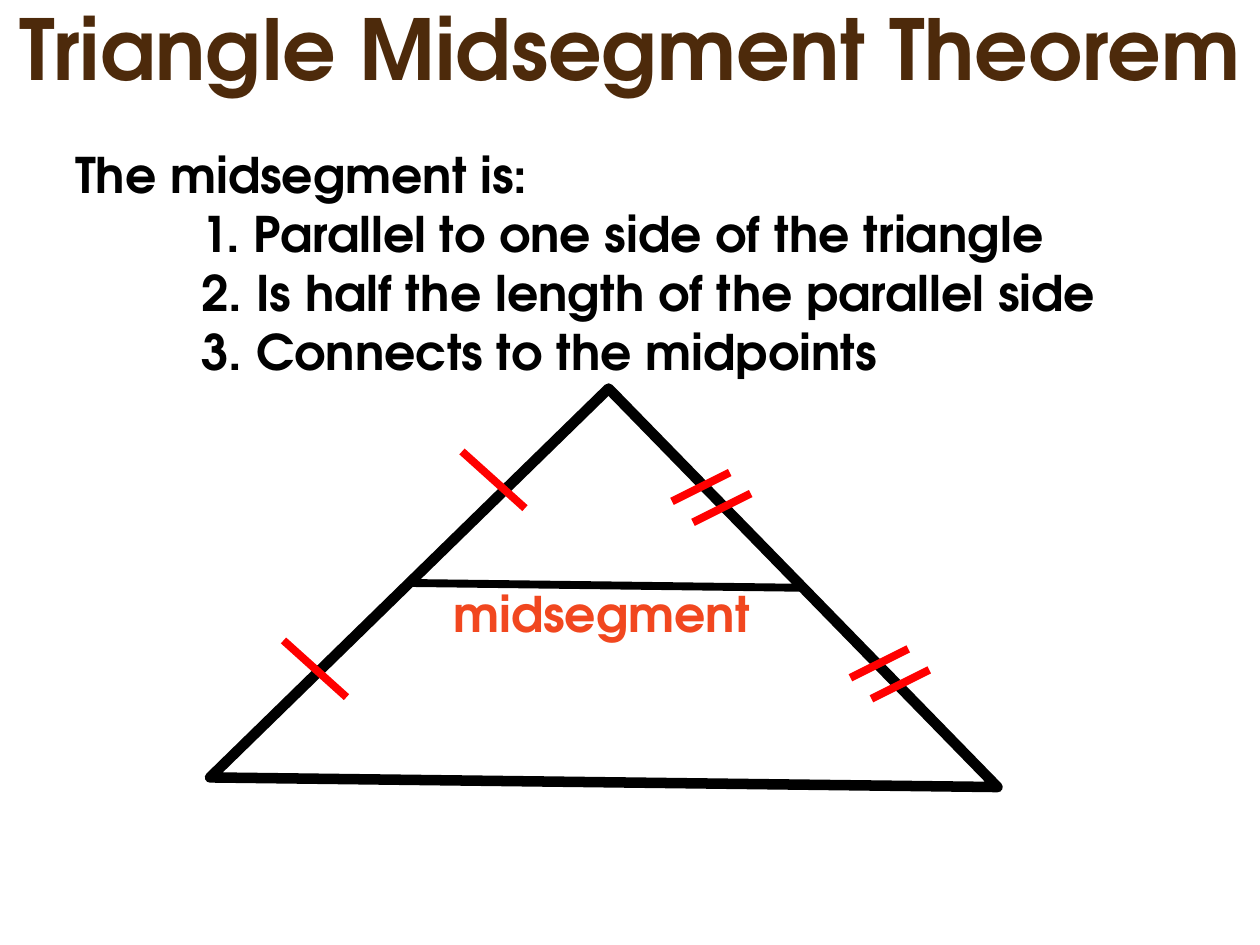
from dataclasses import dataclass
from math import cos, radians, sin, sqrt

from lxml import etree
from pptx import Presentation
from pptx.dml.color import RGBColor
from pptx.enum.shapes import MSO_CONNECTOR, MSO_SHAPE
from pptx.enum.text import MSO_ANCHOR, PP_ALIGN
from pptx.oxml.ns import qn
from pptx.util import Inches, Pt

STRAIGHT = MSO_CONNECTOR.STRAIGHT
RIGHT_TRIANGLE = MSO_SHAPE.RIGHT_TRIANGLE
BOTTOM, TOP = MSO_ANCHOR.BOTTOM, MSO_ANCHOR.TOP
CENTER, LEFT = PP_ALIGN.CENTER, PP_ALIGN.LEFT

SLIDE_W, SLIDE_H = Inches(10), Inches(7.5)
CELL = SLIDE_W / 120  # the grid has 120 columns and 90 rows


@dataclass(frozen=True)
class Theme:
    font: str = "TeX Gyre Adventor"
    title_size: int = 48
    body_size: int = 28
    title: str = "4D2A0B"
    ink: str = "000000"
    label: str = "F1471F"
    tick: str = "FF0000"
    outline: float = 6
    stroke: float = 4.5


@dataclass(frozen=True)
class Box:
    """A region measured in grid columns and rows."""
    col: float
    row: float
    cols: float
    rows: float

    def inner(self, col, row, cols, rows):
        return Box(self.col + col, self.row + row, cols, rows)

    def emu(self):
        return [round(n * CELL) for n in (self.col, self.row, self.cols, self.rows)]


THEME = Theme()


def add_text(slide, box, lines, size, color, align=LEFT, anchor=TOP):
    frame = slide.shapes.add_textbox(*box.emu()).text_frame
    frame.word_wrap = True
    frame.vertical_anchor = anchor
    frame.text = "\n".join(lines)
    for paragraph in frame.paragraphs:
        paragraph.alignment = align
        font = paragraph.font
        font.name, font.size, font.bold = THEME.font, Pt(size), True
        font.color.rgb = RGBColor.from_string(color)
    return frame


def add_line(slide, box, start, end, color):
    """Draw a line between two points given relative to the box."""
    points = [round(n * CELL) for x, y in (start, end) for n in (box.col + x, box.row + y)]
    line = slide.shapes.add_connector(STRAIGHT, *points)
    line.line.color.rgb = RGBColor.from_string(color)
    line.line.width = Pt(THEME.stroke)
    etree.SubElement(line._element.spPr, qn("a:effectLst"))


def add_title(slide, box):
    frame = add_text(slide, box, ["Triangle Midsegment Theorem"],
                     THEME.title_size, THEME.title, CENTER, BOTTOM)
    frame.margin_left = frame.margin_right = 0
    frame.paragraphs[0].line_spacing = 0.9


def add_properties(slide, box):
    frame = add_text(slide, box, [
        "The midsegment is:",
        "1. Parallel to one side of the triangle",
        "2. Is half the length of the parallel side",
        "3. Connects to the midpoints",
    ], THEME.body_size, THEME.ink)
    for paragraph in frame.paragraphs[1:]:
        paragraph._p.get_or_add_pPr().set("marL", str(Inches(1)))


def add_triangle(slide, box, tilt):
    """Set a right triangle on its hypotenuse, which is as wide as the box."""
    side = box.cols / sqrt(2)
    corner = (box.cols - side) / 2
    triangle = slide.shapes.add_shape(
        RIGHT_TRIANGLE, *box.inner(corner, corner, side, side).emu())
    triangle.rotation = 135 + tilt
    triangle.shadow.inherit = False
    triangle.fill.background()
    triangle.line.color.rgb = RGBColor.from_string(THEME.ink)
    triangle.line.width = Pt(THEME.outline)


def add_midsegment(slide, box, tilt):
    """Join the midpoints of the two legs of the tilted triangle."""
    radius = box.cols / 2

    def vertex(angle):
        turn = radians(angle + tilt)
        return radius * (1 + cos(turn)), radius * (1 + sin(turn))

    apex = vertex(270)
    start, end = [tuple((a + b) / 2 for a, b in zip(apex, vertex(angle)))
                  for angle in (180, 0)]
    add_line(slide, box, start, end, THEME.ink)


def add_ticks(slide, box):
    """Mark the halves of the left leg once and those of the right leg twice."""
    for x, y in ((24, 6), (7, 24)):
        add_line(slide, box, (x, y), (x + 6, y + 5.4), THEME.tick)
    for x, y in ((44, 8), (61, 24.8)):
        for step in (0, 2):
            add_line(slide, box, (x + 5.5 + step, y + step),
                     (x + step, y + 2.75 + step), THEME.tick)


def add_diagram(slide, box):
    tilt = 0.7
    add_triangle(slide, box, tilt)
    add_midsegment(slide, box, tilt)
    add_ticks(slide, box)
    add_text(slide, box.inner(22, 18, 41, 7), ["midsegment"],
             THEME.body_size, THEME.label)


def main():
    deck = Presentation()
    deck.slide_width, deck.slide_height = SLIDE_W, SLIDE_H
    slide = deck.slides.add_slide(deck.slide_layouts[6])
    add_title(slide, Box(0, 0, 120, 10))
    add_diagram(slide, Box(20, 37, 75, 38))
    add_properties(slide, Box(6, 13.2, 104, 24))
    deck.save("out.pptx")


if __name__ == "__main__":
    main()
